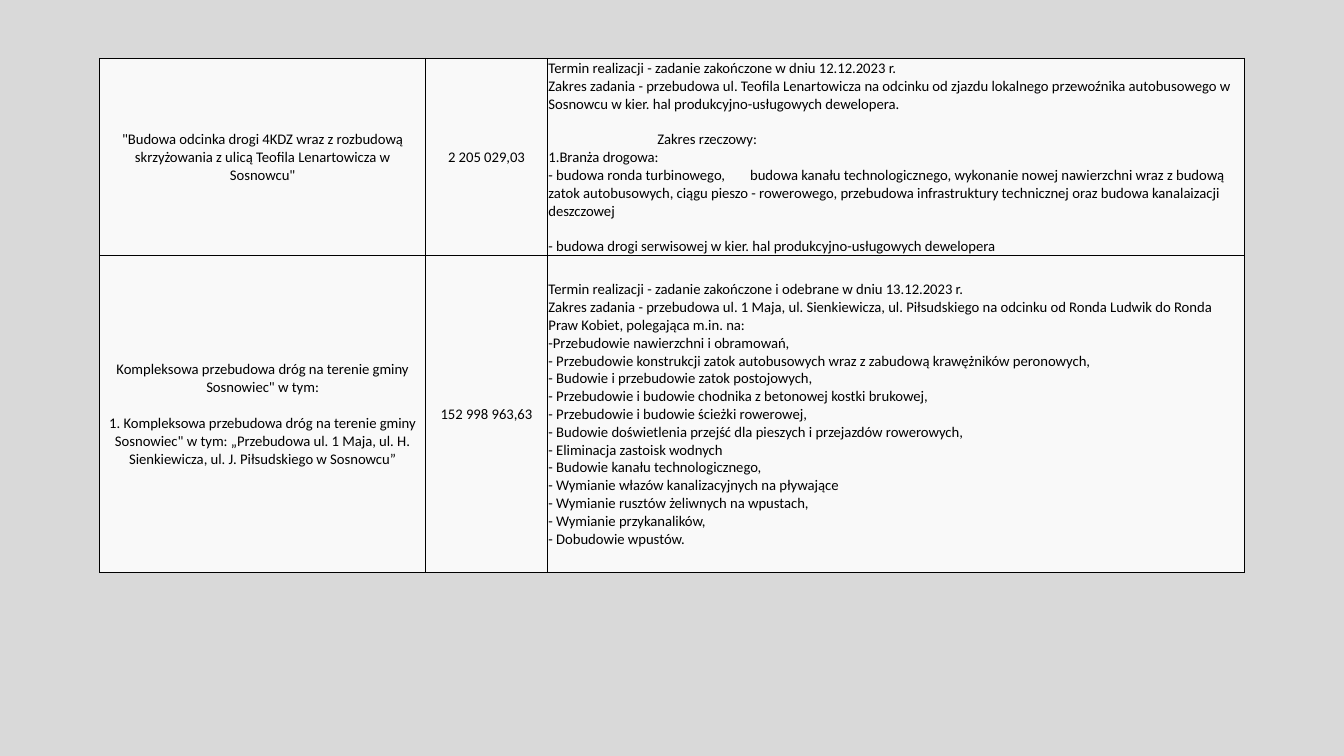
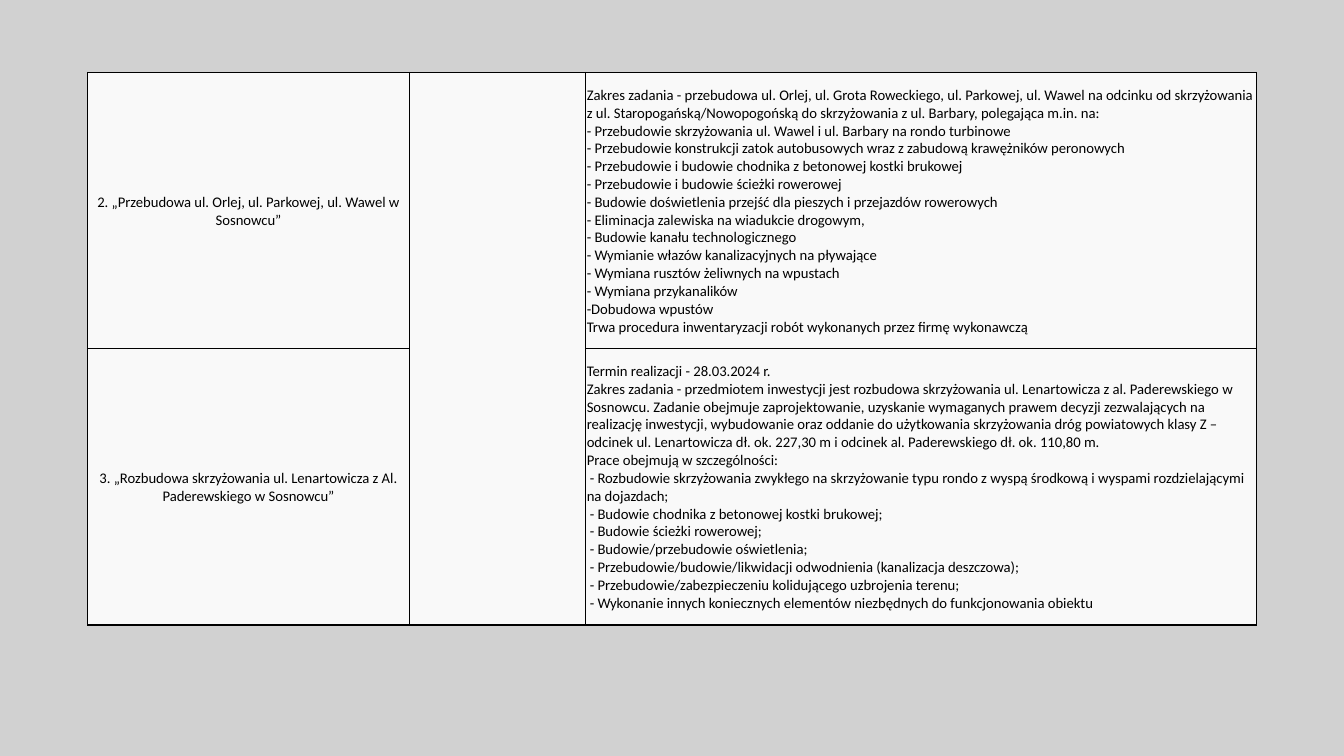
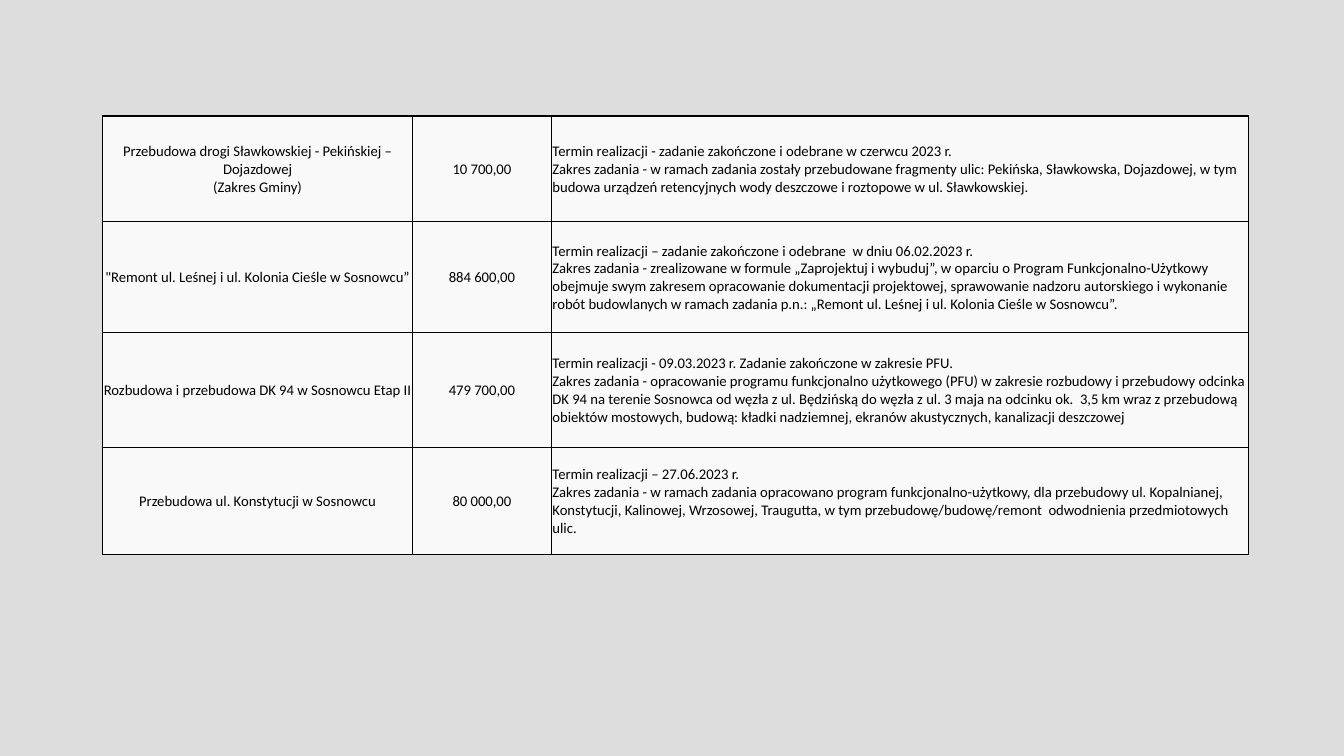
from dataclasses import dataclass

from lxml import etree
from pptx import Presentation
from pptx import util as u
from pptx.dml import color
from pptx.enum import text
from pptx.oxml import ns

Inches = u.Inches


@dataclass(frozen=True)
class Theme:
    font: str = "Calibri"
    size: float = 10.5
    ink: str = "000000"
    cell: str = "F9F9F9"
    border: float = 1
    blank_line: float = 12.8
    inset: float = 0.01


@dataclass(frozen=True)
class Para:
    text: str
    before: float = 0
    left: float = 0
    first: float = 0
    tab: float = 0


@dataclass(frozen=True)
class Task:
    height: float
    name: tuple
    amount: str
    scope: tuple


@dataclass(frozen=True)
class TaskTable:
    left: float
    top: float
    widths: tuple
    tasks: tuple
    merge_amounts: bool = False


@dataclass(frozen=True)
class Page:
    background: str
    tables: tuple


THEME = Theme()
GAP = THEME.blank_line
DASH_INDENT = 0.03


def dash(item: str) -> Para:
    return Para(f"- {item}", first=DASH_INDENT)


PAGES = (
    Page("D9D9D9", (TaskTable(0.99, 0.58, (3.23, 1.21, 6.91), (
        Task(
            1.95,
            (Para('"Budowa odcinka drogi 4KDZ wraz z rozbudową skrzyżowania z ulicą Teofila Lenartowicza w Sosnowcu"'),),
            "2 205 029,03",
            (
                Para("Termin realizacji - zadanie zakończone w dniu 12.12.2023 r."),
                Para("Zakres zadania - przebudowa ul. Teofila Lenartowicza na odcinku od zjazdu lokalnego "
                     "przewoźnika autobusowego w Sosnowcu w kier. hal produkcyjno-usługowych dewelopera."),
                Para("Zakres rzeczowy:", before=GAP, left=1.08),
                Para("1.Branża drogowa:"),
                Para("- budowa ronda turbinowego,\tbudowa kanału technologicznego, wykonanie nowej nawierzchni wraz "
                     "z budową zatok autobusowych, ciągu pieszo - rowerowego, przebudowa infrastruktury technicznej "
                     "oraz budowa kanalaizacji deszczowej", tab=1.88),
                Para("- budowa drogi serwisowej w kier. hal produkcyjno-usługowych dewelopera", before=GAP),
            ),
        ),
        Task(
            3.14,
            (
                Para('Kompleksowa przebudowa dróg na terenie gminy Sosnowiec" w tym:'),
                Para('1. Kompleksowa przebudowa dróg na terenie gminy Sosnowiec" w tym: „Przebudowa ul. 1 Maja, '
                     'ul. H. Sienkiewicza, ul. J. Piłsudskiego w Sosnowcu”', before=GAP),
            ),
            "152 998 963,63",
            (
                Para("Termin realizacji - zadanie zakończone i odebrane w dniu 13.12.2023 r."),
                Para("Zakres zadania - przebudowa ul. 1 Maja, ul. Sienkiewicza, ul. Piłsudskiego na odcinku od Ronda "
                     "Ludwik do Ronda Praw Kobiet, polegająca m.in. na:"),
                Para("-Przebudowie nawierzchni i obramowań,"),
                Para("- Przebudowie konstrukcji zatok autobusowych wraz z zabudową krawężników peronowych,"),
                Para("- Budowie i przebudowie zatok postojowych,"),
                Para("- Przebudowie i budowie chodnika z betonowej kostki brukowej,"),
                Para("- Przebudowie i budowie ścieżki rowerowej,"),
                Para("- Budowie doświetlenia przejść dla pieszych i przejazdów rowerowych,"),
                Para("- Eliminacja zastoisk wodnych"),
                Para("- Budowie kanału technologicznego,"),
                Para("- Wymianie włazów kanalizacyjnych na pływające"),
                Para("- Wymianie rusztów żeliwnych na wpustach,"),
                Para("- Wymianie przykanalików,"),
                Para("- Dobudowie wpustów."),
            ),
        ),
    )),)),
    Page("D1D1D1", (TaskTable(0.87, 0.72, (3.19, 1.75, 6.65), (
        Task(
            2.74,
            (Para("2. „Przebudowa ul. Orlej, ul. Parkowej, ul. Wawel w Sosnowcu”"),),
            "",
            (
                Para("Zakres zadania - przebudowa ul. Orlej, ul. Grota Roweckiego, ul. Parkowej, ul. Wawel na odcinku "
                     "od skrzyżowania z ul. Staropogańską/Nowopogońską do skrzyżowania z ul. Barbary, polegająca "
                     "m.in. na:"),
                Para("- Przebudowie skrzyżowania ul. Wawel i ul. Barbary na rondo turbinowe"),
                Para("- Przebudowie konstrukcji zatok autobusowych wraz z zabudową krawężników peronowych"),
                Para("- Przebudowie i budowie chodnika z betonowej kostki brukowej"),
                Para("- Przebudowie i budowie ścieżki rowerowej"),
                Para("- Budowie doświetlenia przejść dla pieszych i przejazdów rowerowych"),
                Para("- Eliminacja zalewiska na wiadukcie drogowym,"),
                Para("- Budowie kanału technologicznego"),
                Para("- Wymianie włazów kanalizacyjnych na pływające"),
                Para("- Wymiana rusztów żeliwnych na wpustach"),
                Para("- Wymiana przykanalików"),
                Para("-Dobudowa wpustów"),
                Para("Trwa procedura inwentaryzacji robót wykonanych przez firmę wykonawczą"),
            ),
        ),
        Task(
            2.74,
            (Para("3. „Rozbudowa skrzyżowania ul. Lenartowicza z Al. Paderewskiego w Sosnowcu”"),),
            "",
            (
                Para("Termin realizacji - 28.03.2024 r."),
                Para("Zakres zadania - przedmiotem inwestycji jest rozbudowa skrzyżowania ul. Lenartowicza z al. "
                     "Paderewskiego w Sosnowcu. Zadanie obejmuje zaprojektowanie, uzyskanie wymaganych prawem decyzji "
                     "zezwalających na realizację inwestycji, wybudowanie oraz oddanie do użytkowania skrzyżowania "
                     "dróg powiatowych klasy Z – odcinek ul. Lenartowicza dł. ok. 227,30 m i odcinek al. "
                     "Paderewskiego dł. ok. 110,80 m."),
                Para("Prace obejmują w szczególności:"),
                dash("Rozbudowie skrzyżowania zwykłego na skrzyżowanie typu rondo z wyspą środkową i wyspami "
                     "rozdzielającymi na dojazdach;"),
                dash("Budowie chodnika z betonowej kostki brukowej;"),
                dash("Budowie ścieżki rowerowej;"),
                dash("Budowie/przebudowie oświetlenia;"),
                dash("Przebudowie/budowie/likwidacji odwodnienia (kanalizacja deszczowa);"),
                dash("Przebudowie/zabezpieczeniu kolidującego uzbrojenia terenu;"),
                dash("Wykonanie innych koniecznych elementów niezbędnych do funkcjonowania obiektu"),
            ),
        ),
    ), merge_amounts=True),)),
    Page("DDDDDD", (
        TaskTable(1.02, 1.15, (3.07, 1.38, 6.91), (
            Task(
                1.05,
                (Para("Przebudowa drogi Sławkowskiej - Pekińskiej – Dojazdowej"), Para("(Zakres Gminy)")),
                "10 700,00",
                (
                    Para("Termin realizacji - zadanie zakończone i odebrane w czerwcu 2023 r."),
                    Para("Zakres zadania - w ramach zadania zostały przebudowane fragmenty ulic: Pekińska, "
                         "Sławkowska, Dojazdowej, w tym budowa urządzeń retencyjnych wody deszczowe i roztopowe "
                         "w ul. Sławkowskiej."),
                ),
            ),
            Task(
                1.1,
                (Para('"Remont ul. Leśnej i ul. Kolonia Cieśle w Sosnowcu”'),),
                "884 600,00",
                (
                    Para("Termin realizacji – zadanie zakończone i odebrane  w dniu 06.02.2023 r."),
                    Para("Zakres zadania - zrealizowane w formule „Zaprojektuj i wybuduj”, w oparciu o Program "
                         "Funkcjonalno-Użytkowy obejmuje swym zakresem opracowanie dokumentacji projektowej, "
                         "sprawowanie nadzoru autorskiego i wykonanie robót budowlanych w ramach zadania p.n.: "
                         "„Remont ul. Leśnej i ul. Kolonia Cieśle w Sosnowcu”."),
                ),
            ),
        )),
        TaskTable(1.02, 3.3, (3.07, 1.38, 6.91), (
            Task(
                1.14,
                (Para("Rozbudowa i przebudowa DK 94 w Sosnowcu Etap II"),),
                "479 700,00",
                (
                    Para("Termin realizacji - 09.03.2023 r. Zadanie zakończone w zakresie PFU."),
                    Para("Zakres zadania - opracowanie programu funkcjonalno użytkowego (PFU) w zakresie rozbudowy "
                         "i przebudowy odcinka DK 94 na terenie Sosnowca od węzła z ul. Będzińską do węzła z ul. "
                         "3 maja na odcinku ok.  3,5 km wraz z przebudową obiektów mostowych, budową: kładki "
                         "nadziemnej, ekranów akustycznych, kanalizacji deszczowej"),
                ),
            ),
            Task(
                1.06,
                (Para("Przebudowa ul. Konstytucji w Sosnowcu"),),
                "80 000,00",
                (
                    Para("Termin realizacji – 27.06.2023 r."),
                    Para("Zakres zadania - w ramach zadania opracowano program funkcjonalno-użytkowy, dla przebudowy "
                         "ul. Kopalnianej, Konstytucji, Kalinowej, Wrzosowej, Traugutta, w tym "
                         "przebudowę/budowę/remont  odwodnienia przedmiotowych ulic."),
                ),
            ),
        )),
    )),
)


def rgb(value: str) -> color.RGBColor:
    return color.RGBColor.from_string(value)


def add_borders(cell) -> None:
    tc_pr = cell._tc.get_or_add_tcPr()
    for i, side in enumerate(("lnL", "lnR", "lnT", "lnB")):
        ln = etree.Element(ns.qn(f"a:{side}"), w=str(int(u.Pt(THEME.border))))
        fill = etree.SubElement(ln, ns.qn("a:solidFill"))
        etree.SubElement(fill, ns.qn("a:srgbClr"), val=THEME.ink)
        tc_pr.insert(i, ln)


def format_paragraph(p, para: Para, align) -> None:
    p.text = para.text
    p.alignment = align
    if para.before:
        p.space_before = u.Pt(para.before)
    p_pr = p._p.get_or_add_pPr()
    p_pr.set("marL", str(int(Inches(para.left))))
    p_pr.set("indent", str(int(Inches(para.first))))
    if para.tab:
        tabs = etree.SubElement(p_pr, ns.qn("a:tabLst"))
        etree.SubElement(tabs, ns.qn("a:tab"), pos=str(int(Inches(para.tab))), algn="l")
    for r in p.runs:
        r.font.name = THEME.font
        r.font.size = u.Pt(THEME.size)
        r.font.color.rgb = rgb(THEME.ink)


def fill_cell(cell, paras: tuple, align) -> None:
    cell.vertical_anchor = text.MSO_ANCHOR.MIDDLE
    cell.margin_left = cell.margin_right = cell.margin_top = Inches(THEME.inset)
    cell.margin_bottom = 0
    cell.fill.solid()
    cell.fill.fore_color.rgb = rgb(THEME.cell)
    add_borders(cell)
    tf = cell.text_frame
    for i, para in enumerate(paras):
        p = tf.add_paragraph() if i else tf.paragraphs[0]
        format_paragraph(p, para, align)


def add_task_table(s, spec: TaskTable) -> None:
    height = sum(task.height for task in spec.tasks)
    tbl = s.shapes.add_table(len(spec.tasks), len(spec.widths), Inches(spec.left), Inches(spec.top),
                             Inches(sum(spec.widths)), Inches(height)).table
    tbl.first_row = tbl.horz_banding = False
    for col, width in zip(tbl.columns, spec.widths):
        col.width = Inches(width)
    center, left = text.PP_ALIGN.CENTER, text.PP_ALIGN.LEFT
    for i, task in enumerate(spec.tasks):
        tbl.rows[i].height = Inches(task.height)
        amount = (Para(task.amount),) if task.amount else ()
        columns = ((task.name, center), (amount, center), (task.scope, left))
        for j, (paras, align) in enumerate(columns):
            fill_cell(tbl.cell(i, j), paras, align)
    if spec.merge_amounts:
        tbl.cell(0, 1).merge(tbl.cell(len(spec.tasks) - 1, 1))


def main() -> None:
    prs = Presentation()
    prs.slide_width, prs.slide_height = Inches(13.33), Inches(7.5)
    for page in PAGES:
        s = prs.slides.add_slide(prs.slide_layouts[6])
        s.background.fill.solid()
        s.background.fill.fore_color.rgb = rgb(page.background)
        for spec in page.tables:
            add_task_table(s, spec)
    prs.save("out.pptx")


if __name__ == "__main__":
    main()
